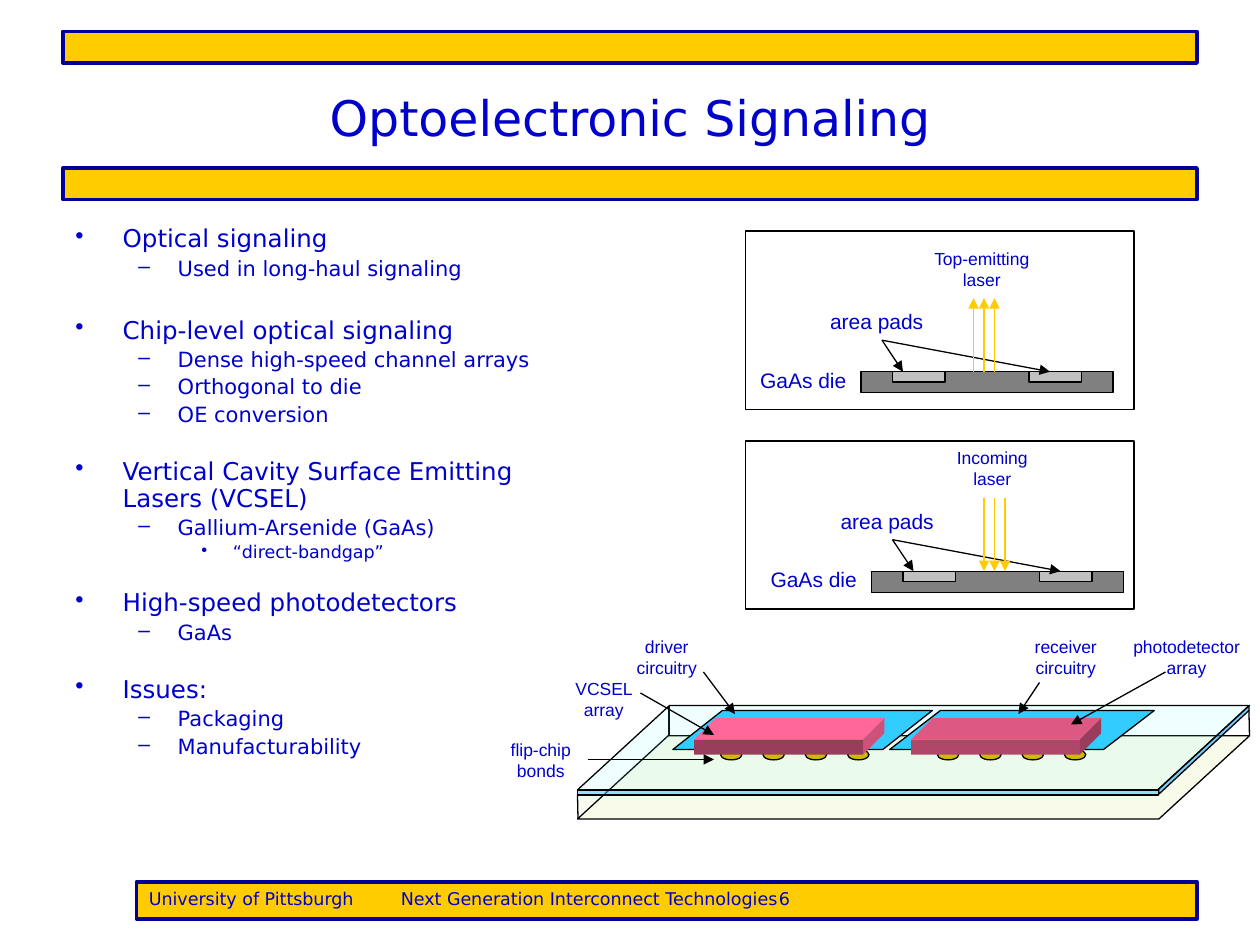
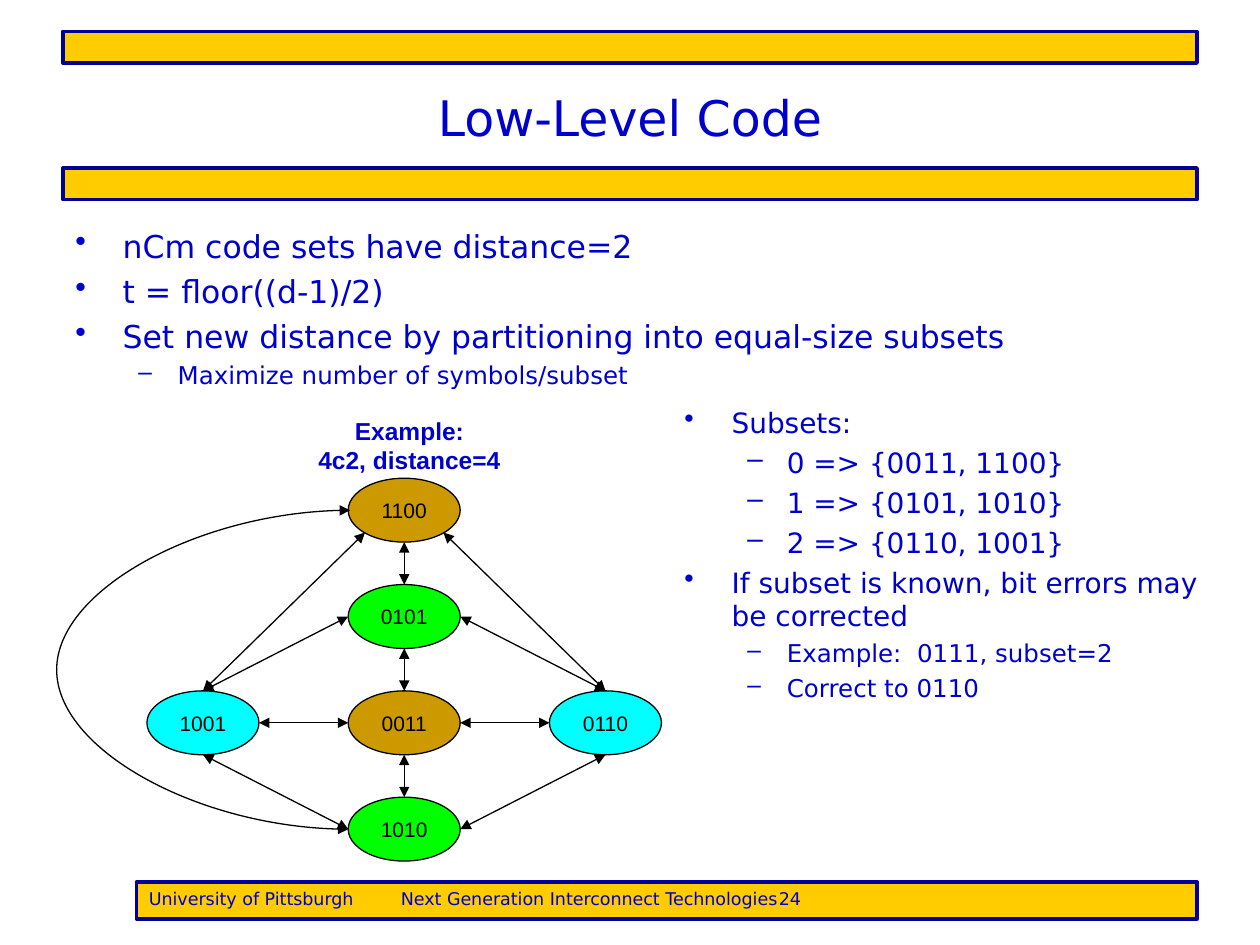
from typing import NamedTuple, Optional

from lxml import etree
from pptx import Presentation
from pptx import util as u
from pptx.dml import color as c
from pptx.enum import shapes as s
from pptx.enum import text as t
from pptx.oxml import ns

BLUE = c.RGBColor(0x00, 0x00, 0xCC)
NAVY = c.RGBColor(0x00, 0x00, 0x99)
GOLD = c.RGBColor(0xFF, 0xCC, 0x00)
BLACK = c.RGBColor(0x00, 0x00, 0x00)
DIE_GRAY = c.RGBColor(0x80, 0x80, 0x80)
PAD_GRAY = c.RGBColor(0xC0, 0xC0, 0xC0)
SKY = c.RGBColor(0x33, 0xCC, 0xFF)
AZURE = c.RGBColor(0x00, 0x99, 0xFF)
ICE = c.RGBColor(0x66, 0xFF, 0xFF)
CREAM = c.RGBColor(0xF8, 0xFA, 0xE2)
LIME_CREAM = c.RGBColor(0xEA, 0xF0, 0xAE)
BOND_GOLD = c.RGBColor(0xD0, 0xB8, 0x08)
PINK = c.RGBColor(0xFF, 0x66, 0x99)
ROSE = c.RGBColor(0xDD, 0x59, 0x84)
DEEP_ROSE = c.RGBColor(0xCC, 0x52, 0x7A)
BERRY = c.RGBColor(0xB0, 0x47, 0x6A)
PLUM = c.RGBColor(0x99, 0x3D, 0x5C)
OCHRE = c.RGBColor(0xCC, 0x99, 0x00)
GREEN = c.RGBColor(0x00, 0xFF, 0x00)
CYAN = c.RGBColor(0x00, 0xFF, 0xFF)

SANS = "DejaVu Sans"
ARIAL = "Arial"
RECT = s.MSO_SHAPE.RECTANGLE
OVAL = s.MSO_SHAPE.OVAL
SLANTED = s.MSO_SHAPE.PARALLELOGRAM
CENTER = t.PP_ALIGN.CENTER

Point = tuple[float, float]


class Box(NamedTuple):
    left: float
    top: float
    width: float
    height: float

    def lengths(self) -> list[u.Length]:
        return [u.Pt(value) for value in self]


class Bullet(NamedTuple):
    text: str
    size: float
    level: int = 0
    gap: float = 0


class Level(NamedTuple):
    mark: str
    margin: float
    hanging: float


class Panel(NamedTuple):
    frame: Box
    die: Point
    caption: str
    emits: bool


class Chip(NamedTuple):
    left: float
    area_width: float
    lean: float
    top_color: c.RGBColor
    front_color: c.RGBColor
    side_color: c.RGBColor


class Callout(NamedTuple):
    text: str
    box: Box
    start: Point
    end: Point


class Node(NamedTuple):
    code: str
    column: int
    row: int
    color: c.RGBColor


LEVELS = [Level("•", 27, 27), Level("–", 58.5, 22.5), Level("•", 90, 18)]

OPTICAL_BULLETS = [
    Bullet("Optical signaling", 14),
    Bullet("Used in long-haul signaling", 12, 1),
    Bullet("Chip-level optical signaling", 14, gap=18),
    Bullet("Dense high-speed channel arrays", 12, 1),
    Bullet("Orthogonal to die", 12, 1),
    Bullet("OE conversion", 12, 1),
    Bullet("Vertical Cavity Surface Emitting Lasers (VCSEL)", 14, gap=15.4),
    Bullet("Gallium-Arsenide (GaAs)", 12, 1),
    Bullet("“direct-bandgap”", 10, 2),
    Bullet("High-speed photodetectors", 14, gap=12.8),
    Bullet("GaAs", 12, 1),
    Bullet("Issues:", 14, gap=15.4),
    Bullet("Packaging", 12, 1),
    Bullet("Manufacturability", 12, 1),
]
PANELS = [
    Panel(Box(426, 132, 222, 102), (492, 212.4), "Top-emitting laser", True),
    Panel(Box(426, 252, 222, 96), (498, 326.4), "Incoming laser", False),
]
CHIPS = [
    Chip(520.6, 151.2, 1.3, ROSE, BERRY, PLUM),
    Chip(396.7, 148.3, 1.27, PINK, PLUM, DEEP_ROSE),
]
CALLOUTS = [
    Callout("driver circuitry", Box(348, 360, 66, 31), (402, 384), (420, 408)),
    Callout("VCSEL array", Box(312, 384, 66, 31), (366, 396), (408, 420)),
    Callout("flip-chip bonds", Box(276, 419, 66, 31), (336, 434), (408, 434)),
    Callout("receiver circuitry", Box(576, 360, 66, 31), (594, 390), (582, 408)),
    Callout("photodetector array", Box(636, 360, 84, 31), (666, 384), (612, 414)),
]
CODE_BULLETS = [
    Bullet("nCm code sets have distance=2", 18),
    Bullet("t = floor((d-1)/2)", 18),
    Bullet("Set new distance by partitioning into equal-size subsets", 18),
    Bullet("Maximize number of symbols/subset", 14, 1),
]
SUBSET_BULLETS = [
    Bullet("Subsets:", 16),
    Bullet("0 => {0011, 1100}", 16, 1),
    Bullet("1 => {0101, 1010}", 16, 1),
    Bullet("2 => {0110, 1001}", 16, 1),
    Bullet("If subset is known, bit errors may be corrected", 16),
    Bullet("Example:  0111, subset=2", 14, 1),
    Bullet("Correct to 0110", 14, 1),
]
NODES = [
    Node("1100", 1, 0, OCHRE), Node("0101", 1, 1, GREEN), Node("1001", 0, 2, CYAN),
    Node("0011", 1, 2, OCHRE), Node("0110", 2, 2, CYAN), Node("1010", 1, 3, GREEN),
]
NODE_SIZE = (64, 36.5)
SIDES = {"top": (0, -0.5), "bottom": (0, 0.5), "left": (-0.5, 0), "right": (0.5, 0),
         "lower left": (-0.35, 0.35), "lower right": (0.35, 0.35)}
EDGES = [
    ("0011", "left", "1001", "right"), ("0011", "bottom", "1010", "top"),
    ("0011", "right", "0110", "left"), ("0011", "top", "0101", "bottom"),
    ("0101", "left", "1001", "top"), ("0101", "right", "0110", "top"),
    ("0101", "top", "1100", "bottom"), ("1001", "bottom", "1010", "left"),
    ("1010", "right", "0110", "bottom"), ("1100", "lower left", "1001", "top"),
    ("1100", "lower right", "0110", "top"),
]


def add_run(paragraph, content: str, size: float, font: str, color=BLUE, bold=False) -> None:
    run = paragraph.add_run()
    run.text = content
    run.font.size, run.font.name, run.font.bold = u.Pt(size), font, bold
    run.font.color.rgb = color


def paint(shape, fill: Optional[c.RGBColor], line: Optional[c.RGBColor] = BLACK,
          weight: float = 0.75, opacity: int = 100) -> None:
    shape.shadow.inherit = False
    if fill is None:
        shape.fill.background()
    else:
        shape.fill.solid()
        shape.fill.fore_color.rgb = fill
    if opacity < 100:
        tint = shape.element.spPr.find(ns.qn("a:solidFill"))[0]
        etree.SubElement(tint, ns.qn("a:alpha"), val=str(opacity * 1000))
    if line is None:
        shape.line.fill.background()
    else:
        shape.line.color.rgb, shape.line.width = line, u.Pt(weight)


def add_preset(slide, kind, box: Box, fill, lean: Optional[float] = None, **style):
    shape = slide.shapes.add_shape(kind, *box.lengths())
    if lean is not None:
        shape.adjustments[0] = lean
    paint(shape, fill, **style)
    return shape


def add_outline(slide, points: list[Point], fill, **style) -> None:
    corners = [(u.Pt(x), u.Pt(y)) for x, y in points]
    builder = slide.shapes.build_freeform(*corners[0])
    builder.add_line_segments(corners[1:], close=True)
    paint(builder.convert_to_shape(), fill, **style)


def add_line(slide, start: Point, end: Point, color=BLACK, arrows: tuple[str, ...] = (),
             kind=s.MSO_CONNECTOR.STRAIGHT):
    """Draw a line; arrows lists the ends ("headEnd" is the start) that get a triangle."""
    connector = slide.shapes.add_connector(kind, *(u.Pt(v) for v in (*start, *end)))
    connector.line.color.rgb, connector.line.width = color, u.Pt(0.75)
    properties = connector.element.spPr
    for name in arrows:
        etree.SubElement(properties.find(ns.qn("a:ln")), ns.qn(f"a:{name}"), type="triangle")
    etree.SubElement(properties, ns.qn("a:effectLst"))
    return connector


def add_label(slide, lines: list[str], box: Box, size: float, bold=False) -> None:
    frame = slide.shapes.add_textbox(*box.lengths()).text_frame
    frame.word_wrap = True
    for index, line in enumerate(lines):
        paragraph = frame.add_paragraph() if index else frame.paragraphs[0]
        paragraph.alignment = CENTER
        add_run(paragraph, line, size, ARIAL, bold=bold)


def add_bullets(slide, bullets: list[Bullet], box: Box, line_spacing: float = 1.0) -> None:
    frame = slide.shapes.add_textbox(*box.lengths()).text_frame
    frame.word_wrap = True
    for index, bullet in enumerate(bullets):
        paragraph = frame.add_paragraph() if index else frame.paragraphs[0]
        level = LEVELS[bullet.level]
        paragraph.level = bullet.level
        properties = paragraph._p.get_or_add_pPr()
        properties.set("marL", str(u.Pt(level.margin)))
        properties.set("indent", str(-u.Pt(level.hanging)))
        etree.SubElement(properties, ns.qn("a:buChar"), char=level.mark)
        paragraph.line_spacing = line_spacing
        if index:
            paragraph.space_before = u.Pt(0.23 * bullet.size + bullet.gap)
        add_run(paragraph, bullet.text, bullet.size, SANS)


def add_base_slide(presentation, title: str, number: int):
    """Add a slide with its title, two gold bands and the footer."""
    slide = presentation.slides.add_slide(presentation.slide_layouts[5])
    for top in (96, 18):
        add_preset(slide, RECT, Box(36, top, 648, 18), GOLD, line=NAVY, weight=2.25)
    footer = add_preset(slide, RECT, Box(78, 504, 606, 21), GOLD, line=NAVY, weight=2.25)
    footer.text_frame.vertical_anchor = t.MSO_ANCHOR.TOP
    paragraph = footer.text_frame.paragraphs[0]
    paragraph.alignment = t.PP_ALIGN.LEFT
    tabs = etree.SubElement(paragraph._p.get_or_add_pPr(), ns.qn("a:tabLst"))
    for position in (144, 360):
        etree.SubElement(tabs, ns.qn("a:tab"), pos=str(u.Pt(position)), algn="l")
    add_run(paragraph, f"University of Pittsburgh\tNext Generation Interconnect Technologies\t{number}",
            10, SANS)
    heading = slide.shapes.title
    heading.left, heading.top, heading.width, heading.height = Box(36, 21.6, 648, 90).lengths()
    heading.text_frame.vertical_anchor = t.MSO_ANCHOR.MIDDLE
    heading.text_frame.paragraphs[0].alignment = CENTER
    add_run(heading.text_frame.paragraphs[0], title, 28, SANS)
    return slide


def add_panel(slide, panel: Panel) -> None:
    x, y = panel.die
    add_preset(slide, RECT, Box(x, y, 144, 12), DIE_GRAY)
    for offset in (18, 96):
        add_preset(slide, RECT, Box(x + offset, y, 30, 6), PAD_GRAY)
    add_label(slide, ["GaAs die"], Box(x - 72, y - 6, 78, 21.6), 12)
    add_label(slide, ["area pads"], Box(x - 30, y - 39.6, 78, 21.6), 12)
    for offset in (24, 108):
        add_line(slide, (x + 12, y - 18), (x + offset, y), arrows=("tailEnd",))
    for beam in range(3):
        beam_x = x + 64.3 + 6 * beam
        add_line(slide, (beam_x, y), (beam_x, y - 42), GOLD,
                 ("tailEnd",) if panel.emits else ("headEnd",))
    add_label(slide, [panel.caption], Box(x + 30, y - 74.4, 78, 31), 10)
    add_preset(slide, RECT, panel.frame, None)


def add_chip(slide, chip: Chip) -> None:
    """Draw the bonds, the circuit area and the raised block of one chip."""
    for index in range(4):
        add_preset(slide, OVAL, Box(chip.left + 15.1 + 24.2 * index, 428.4, 12.2, 5.8), BOND_GOLD)
    add_preset(slide, SLANTED, Box(chip.left - 12.2, 406, chip.area_width, 22.3), SKY, chip.lean)
    left, right, top, bottom, depth = chip.left, chip.left + 96.5, 422.6, 431.2, 12.2
    add_preset(slide, RECT, Box(left, top, right - left, bottom - top), chip.front_color, line=None)
    back_right = (right + depth, top - depth)
    add_outline(slide, [(left, top), (left + depth, top - depth), back_right, (right, top)],
                chip.top_color, line=None)
    add_outline(slide, [(right, top), back_right, (right + depth, bottom - depth), (right, bottom)],
                chip.side_color, line=None)


def add_substrate_and_chips(slide) -> None:
    add_outline(slide, [(330, 453.6), (345, 453.6), (330, 468)], CREAM, line=None, opacity=50)
    add_line(slide, (382.3, 403.2), (382.3, 420.5))
    add_preset(slide, SLANTED, Box(330, 420.5, 384, 47.5), LIME_CREAM, 1.09, opacity=25)
    add_preset(slide, SLANTED, Box(330, 403.2, 384, 48.2), ICE, 1.09, opacity=10)
    for chip in CHIPS:
        add_chip(slide, chip)
    add_preset(slide, RECT, Box(330, 451.4, 332, 2.9), SKY, opacity=54)
    add_outline(slide, [(662.2, 450.9), (713.7, 403.2), (713.7, 406), (662.2, 453.8)],
                AZURE, opacity=50)
    add_line(slide, (330, 453.6), (330.3, 468))
    add_line(slide, (713.7, 406), (714, 420.5))


def node_point(node: Node, side: str) -> Point:
    width, height = NODE_SIZE
    across, down = SIDES[side]
    return (84 + 115 * node.column + width * (0.5 + across),
            273.3 + 60.75 * node.row + height * (0.5 + down))


def add_code_graph(slide) -> None:
    nodes = {node.code: node for node in NODES}
    for node in NODES:
        box = Box(node_point(node, "left")[0], node_point(node, "top")[1], *NODE_SIZE)
        frame = add_preset(slide, OVAL, box, node.color).text_frame
        frame.margin_left = frame.margin_right = frame.margin_top = frame.margin_bottom = 0
        frame.vertical_anchor = t.MSO_ANCHOR.MIDDLE
        frame.paragraphs[0].alignment = CENTER
        add_run(frame.paragraphs[0], node.code, 12, ARIAL, BLACK)
    both = ("headEnd", "tailEnd")
    for first, first_side, second, second_side in EDGES:
        add_line(slide, node_point(nodes[first], first_side),
                 node_point(nodes[second], second_side), arrows=both)
    x, top = node_point(nodes["1100"], "left")
    bottom = node_point(nodes["1010"], "left")[1]
    loop = add_line(slide, (x, top), (x + 1, bottom), arrows=both, kind=s.MSO_CONNECTOR.CURVE)
    properties = loop.element.spPr
    properties.xfrm.set("rot", "10800000")
    properties.xfrm.set("flipH", "1")
    bulge = properties.find(ns.qn("a:prstGeom")).find(ns.qn("a:avLst"))
    etree.SubElement(bulge, ns.qn("a:gd"), name="adj1", fmla="val -16800000")


def main() -> None:
    presentation = Presentation()
    presentation.slide_width, presentation.slide_height = u.Pt(720), u.Pt(540)

    slide = add_base_slide(presentation, "Optoelectronic Signaling", 6)
    add_bullets(slide, OPTICAL_BULLETS, Box(36, 126, 294, 356), 0.9)
    for panel in PANELS:
        add_panel(slide, panel)
    add_substrate_and_chips(slide)
    for callout in CALLOUTS:
        add_label(slide, [callout.text], callout.box, 10)
        add_line(slide, callout.start, callout.end, arrows=("tailEnd",))

    slide = add_base_slide(presentation, "Low-Level Code", 24)
    add_bullets(slide, CODE_BULLETS, Box(36, 126, 648, 108))
    add_code_graph(slide)
    add_label(slide, ["Example:", "4c2, distance=4"], Box(126, 234, 216, 41), 14, bold=True)
    add_bullets(slide, SUBSET_BULLETS, Box(384, 228, 312, 240))

    presentation.save("out.pptx")


if __name__ == "__main__":
    main()
